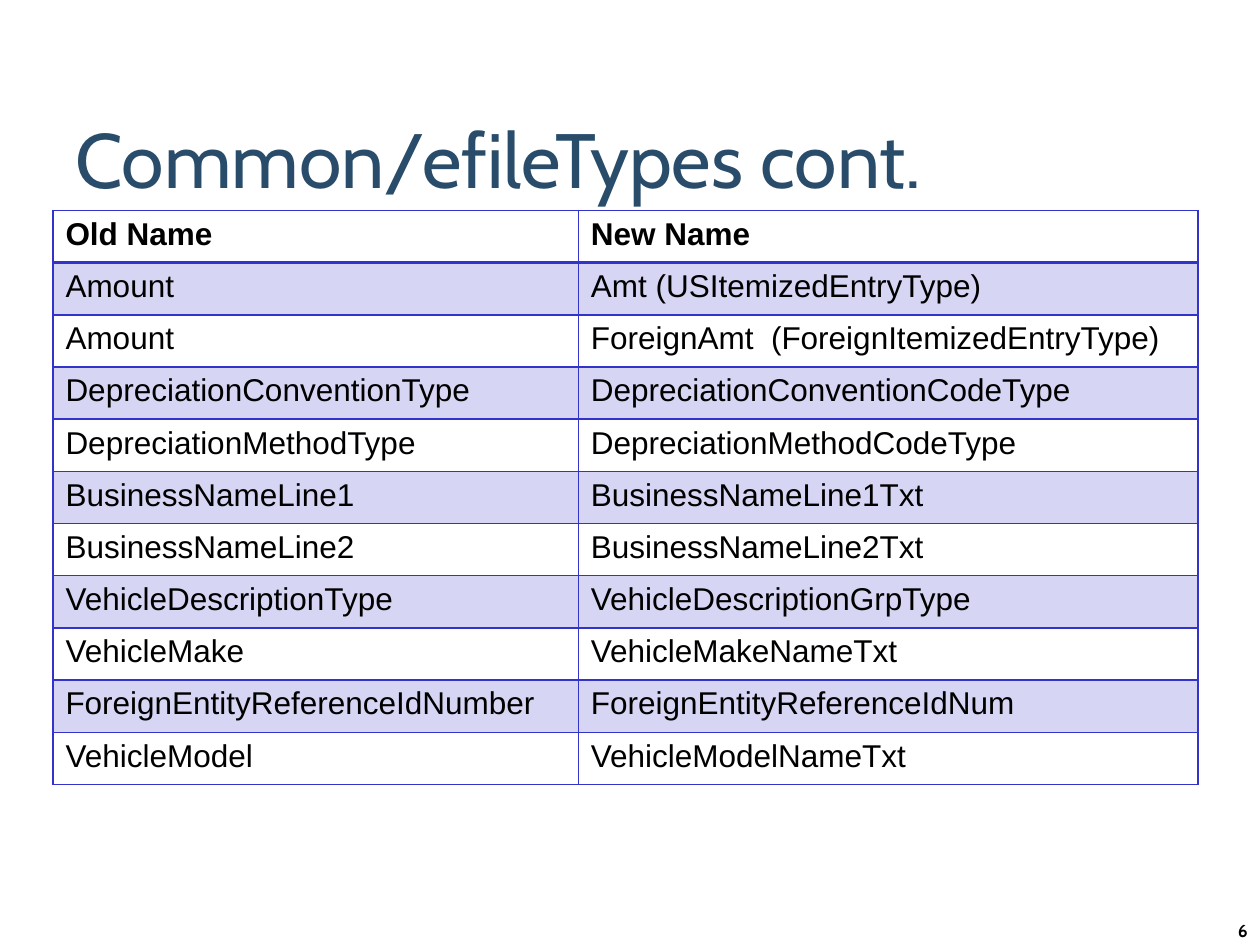
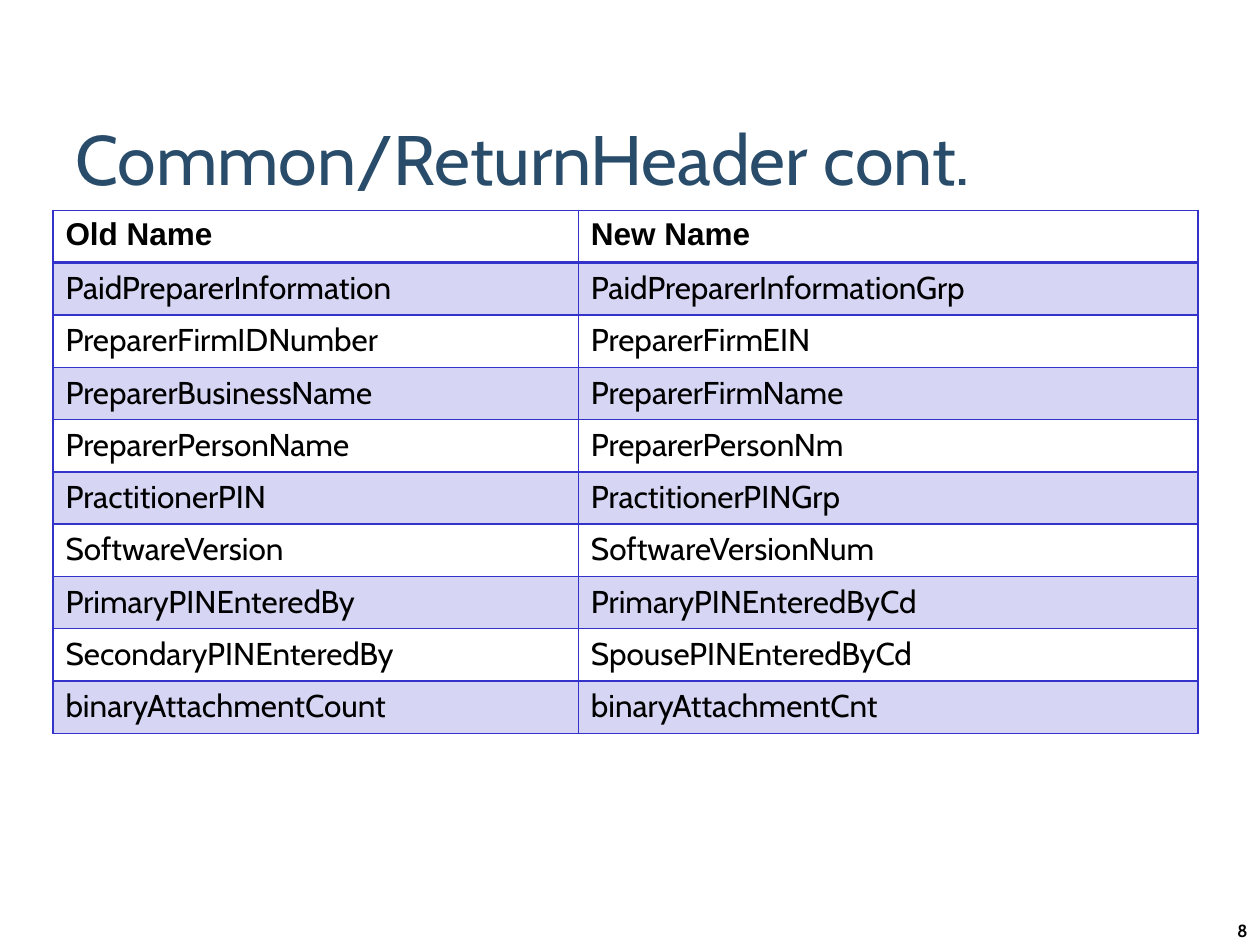
from lxml.etree import SubElement
from pptx import Presentation
from pptx.dml.color import RGBColor
from pptx.enum.text import MSO_ANCHOR, PP_ALIGN
from pptx.oxml.ns import qn
from pptx.util import Inches, Pt

TITLE_BOX = (0.5, 0.75, 8.83, 1)
NUMBER_BOX = (7.92, 7.25, 2.08, 0.25)
TABLE_LEFT, TABLE_TOP = 0.42, 1.67
COLUMN_WIDTHS = (4.17, 4.92)
TITLE_COLOR, TEXT_COLOR, GRID_COLOR = "284C6A", "000000", "3333CC"
BAND_OPACITY = 20
HEADER = ("Old Name", "New Name")

SLIDES = [
    {
        "title": "Common/efileTypes cont.", "title_size": 44,
        "body_font": "Arial", "number": "6", "table_height": 4.56,
        "names": [
            ("Amount", "Amt (USItemizedEntryType)"),
            ("Amount", "ForeignAmt  (ForeignItemizedEntryType)"),
            ("DepreciationConventionType", "DepreciationConventionCodeType"),
            ("DepreciationMethodType", "DepreciationMethodCodeType"),
            ("BusinessNameLine1", "BusinessNameLine1Txt"),
            ("BusinessNameLine2", "BusinessNameLine2Txt"),
            ("VehicleDescriptionType", "VehicleDescriptionGrpType"),
            ("VehicleMake", "VehicleMakeNameTxt"),
            ("ForeignEntityReferenceIdNumber", "ForeignEntityReferenceIdNum"),
            ("VehicleModel", "VehicleModelNameTxt"),
        ],
    },
    {
        "title": "Common/ReturnHeader cont.", "title_size": 40,
        "body_font": "Cabin", "number": "8", "table_height": 4.15,
        "names": [
            ("PaidPreparerInformation", "PaidPreparerInformationGrp"),
            ("PreparerFirmIDNumber", "PreparerFirmEIN"),
            ("PreparerBusinessName", "PreparerFirmName"),
            ("PreparerPersonName", "PreparerPersonNm"),
            ("PractitionerPIN", "PractitionerPINGrp"),
            ("SoftwareVersion", "SoftwareVersionNum"),
            ("PrimaryPINEnteredBy", "PrimaryPINEnteredByCd"),
            ("SecondaryPINEnteredBy", "SpousePINEnteredByCd"),
            ("binaryAttachmentCount", "binaryAttachmentCnt"),
        ],
    },
]


def rgb(color):
    return RGBColor.from_string(color)


def write(tf, text, color=TEXT_COLOR, align=PP_ALIGN.LEFT, **font):
    p = tf.paragraphs[0]
    p.alignment = align
    r = p.add_run()
    r.text = text
    r.font.color.rgb = rgb(color)
    for name, value in font.items():
        setattr(r.font, name, value)


def place(sp, box):
    for name, value in zip(("left", "top", "width", "height"), box):
        setattr(sp, name, Inches(value))


def add_title(s, box, text, size):
    sp = s.shapes.title
    place(sp, box)
    sp.text_frame.vertical_anchor = MSO_ANCHOR.MIDDLE
    write(sp.text_frame, text, TITLE_COLOR, name="Cabin", size=Pt(size))


def add_number(s, box, text):
    tf = s.shapes.add_textbox(*map(Inches, box)).text_frame
    tf.word_wrap = True
    write(tf, text, align=PP_ALIGN.RIGHT, name="Cabin", size=Pt(10), bold=True)


def set_borders(cell, **widths):
    """Draw the sides L, R, T and B; call before the cell gets its fill."""
    tcPr = cell._tc.get_or_add_tcPr()
    for side in "LRTB":
        ln = SubElement(tcPr, qn(f"a:ln{side}"), w=str(Pt(widths.get(side, 1))))
        fill = SubElement(ln, qn("a:solidFill"))
        SubElement(fill, qn("a:srgbClr"), val=GRID_COLOR)


def set_band(cell, banded):
    if not banded:
        cell.fill.background()
        return
    cell.fill.solid()
    cell.fill.fore_color.rgb = rgb(GRID_COLOR)
    color = cell._tc.tcPr.find(qn("a:solidFill")).find(qn("a:srgbClr"))
    SubElement(color, qn("a:alpha"), val=str(BAND_OPACITY * 1000))


def add_name_table(s, left, top, height, names, body_font):
    rows = [HEADER, *names]
    box = (left, top, sum(COLUMN_WIDTHS), height)
    table = s.shapes.add_table(len(rows), len(HEADER), *map(Inches, box)).table
    table.first_row = table.horz_banding = False
    for column, width in zip(table.columns, COLUMN_WIDTHS):
        column.width = Inches(width)
    rules = {0: {"B": 2}, 1: {"T": 2}}
    for i, row in enumerate(rows):
        table.rows[i].height = Inches(height / len(rows))
        for j, text in enumerate(row):
            cell = table.cell(i, j)
            set_borders(cell, **rules.get(i, {}))
            set_band(cell, i % 2 == 1)
            write(cell.text_frame, text, name=body_font if i else "Arial",
                  size=Pt(18), bold=i == 0)


def add_name_slide(prs, content):
    s = prs.slides.add_slide(prs.slide_layouts.get_by_name("Title Only"))
    add_title(s, TITLE_BOX, content["title"], content["title_size"])
    add_name_table(s, TABLE_LEFT, TABLE_TOP, content["table_height"],
                   content["names"], content["body_font"])
    add_number(s, NUMBER_BOX, content["number"])


def main():
    prs = Presentation()
    prs.slide_width, prs.slide_height = Inches(10), Inches(7.5)
    for content in SLIDES:
        add_name_slide(prs, content)
    prs.save("out.pptx")


if __name__ == "__main__":
    main()
